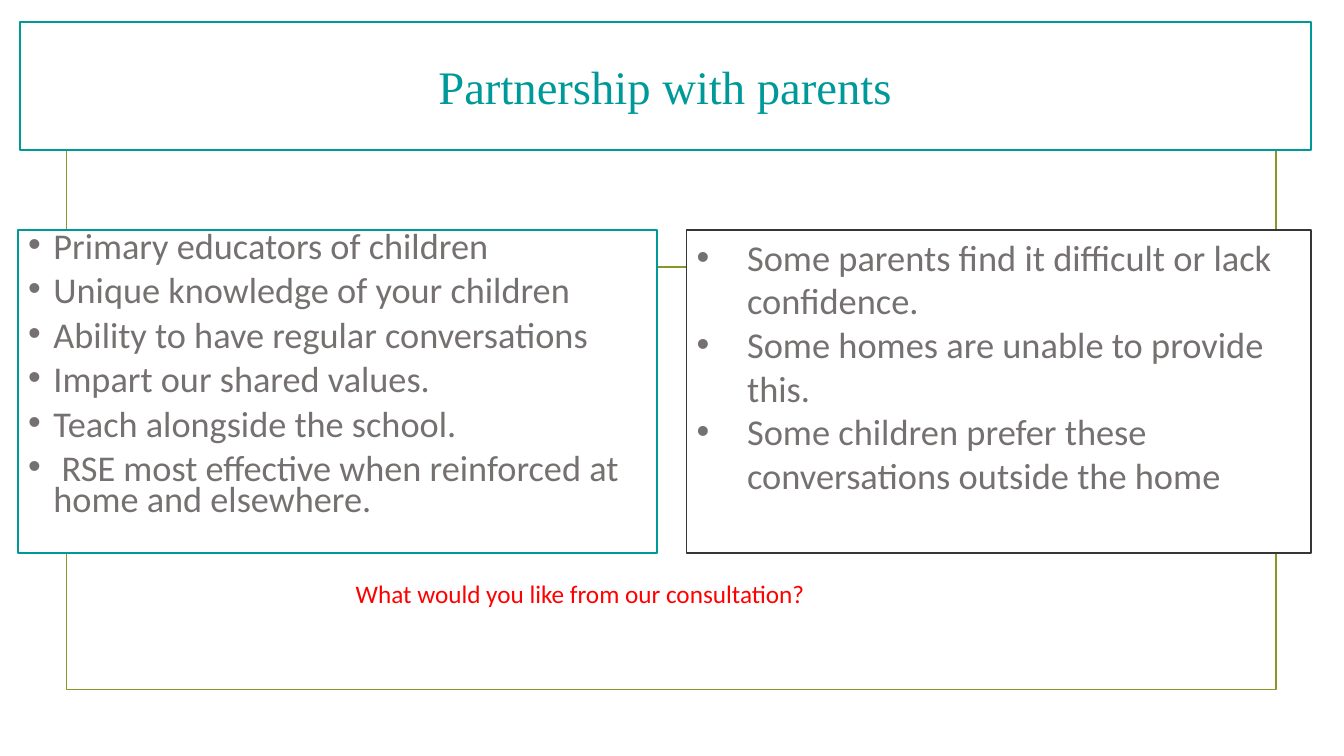
from lxml import etree
from pptx import Presentation, util as u
from pptx.dml.color import RGBColor
from pptx.enum import shapes, text
from pptx.oxml.ns import qn

TITLE = "Partnership with parents"
QUESTION = "What would you like from our consultation?"
STRENGTHS = [
    "Primary educators of children",
    "Unique knowledge of your children",
    "Ability to have regular conversations",
    "Impart our shared values.",
    "Teach alongside the school.",
    " RSE most effective when reinforced at home and elsewhere.",
]
CHALLENGES = [
    "Some parents find it difficult or lack confidence.",
    "Some homes are unable to provide this.",
    "Some children prefer these conversations outside the home",
]
COLORS = {"teal": "009999", "olive": "83992A", "dark": "363636",
          "grey": "767171", "red": "FF0000", "white": "FFFFFF"}

# Grid edges in inches: (start, end)
COLUMNS = {"full": (0.2, 13), "left": (0.18, 6.52), "right": (6.81, 13),
           "frame": (0.66, 12.66), "rule": (1.53, 11.81), "question": (3.43, 16.23)}
ROWS = {"title": (0.22, 1.49), "lists": (2.28, 5.49), "frame": (0.67, 6.84),
        "rule": (2.65, 2.65), "question": (5.69, 6.09)}


def cell(column, row):
    """Return left, top, width and height of a grid cell."""
    (left, right), (top, bottom) = COLUMNS[column], ROWS[row]
    return [u.Inches(n) for n in (left, top, right - left, bottom - top)]


def color(name):
    return RGBColor.from_string(COLORS[name])


def outline(item, name):
    item.line.color.rgb = color(name)
    item.line.width = u.Pt(1.25)


def place(box, column, row, line):
    box.left, box.top, box.width, box.height = cell(column, row)
    box.fill.solid()
    box.fill.fore_color.rgb = color("white")
    outline(box, line)
    box.text_frame.word_wrap = True
    box.text_frame.auto_size = text.MSO_AUTO_SIZE.NONE


def style(para, font, size, name):
    for span in para.runs:
        span.font.name = font
        span.font.size = u.Pt(size)
        span.font.color.rgb = color(name)


def fill_list(box, items, size, indent, spacing, gap):
    frame = box.text_frame
    frame.vertical_anchor = text.MSO_ANCHOR.TOP
    for index, item in enumerate(items):
        para = frame.add_paragraph() if index else frame.paragraphs[0]
        para.text = item
        para.line_spacing = spacing
        para.space_before = u.Pt(gap if index else 0)
        props = para._p.get_or_add_pPr()
        props.set("marL", str(u.Inches(indent)))
        props.set("indent", str(-u.Inches(indent)))
        etree.SubElement(props, qn("a:buFont"), typeface="Arial")
        etree.SubElement(props, qn("a:buChar"), char="•")
        style(para, "Calibri", size, "grey")


def add_backdrop(page):
    """Draw the frame and its rule behind the placeholders."""
    frame = page.shapes.add_shape(shapes.MSO_SHAPE.RECTANGLE, *cell("frame", "frame"))
    frame.shadow.inherit = False
    frame.fill.background()
    left, top, width, height = cell("rule", "rule")
    rule = page.shapes.add_connector(
        shapes.MSO_CONNECTOR.STRAIGHT, left, top, left + width, top + height)
    etree.SubElement(rule._element.spPr, qn("a:effectLst"))
    tree = page.shapes._spTree
    for position, item in enumerate((frame, rule), start=2):
        outline(item, "olive")
        tree.insert(position, item._element)


def main():
    deck = Presentation()
    deck.slide_width, deck.slide_height = u.Inches(13.33), u.Inches(7.5)
    page = deck.slides.add_slide(deck.slide_layouts.get_by_name("Two Content"))
    title, strengths, challenges = page.placeholders
    add_backdrop(page)

    place(title, "full", "title", "teal")
    title.text_frame.text = TITLE
    title.text_frame.vertical_anchor = text.MSO_ANCHOR.MIDDLE
    heading = title.text_frame.paragraphs[0]
    heading.alignment = text.PP_ALIGN.CENTER
    style(heading, "Times New Roman", 33.3, "teal")

    question = page.shapes.add_textbox(*cell("question", "question"))
    question.text_frame.word_wrap = True
    question.text_frame.text = QUESTION
    style(question.text_frame.paragraphs[0], "Calibri", 18, "red")

    place(strengths, "left", "lists", "teal")
    fill_list(strengths, STRENGTHS, size=25.9, indent=0.25, spacing=0.7, gap=10)
    place(challenges, "right", "lists", "dark")
    fill_list(challenges, CHALLENGES, size=26, indent=0.5, spacing=1.0, gap=0)

    deck.save("out.pptx")


if __name__ == "__main__":
    main()
